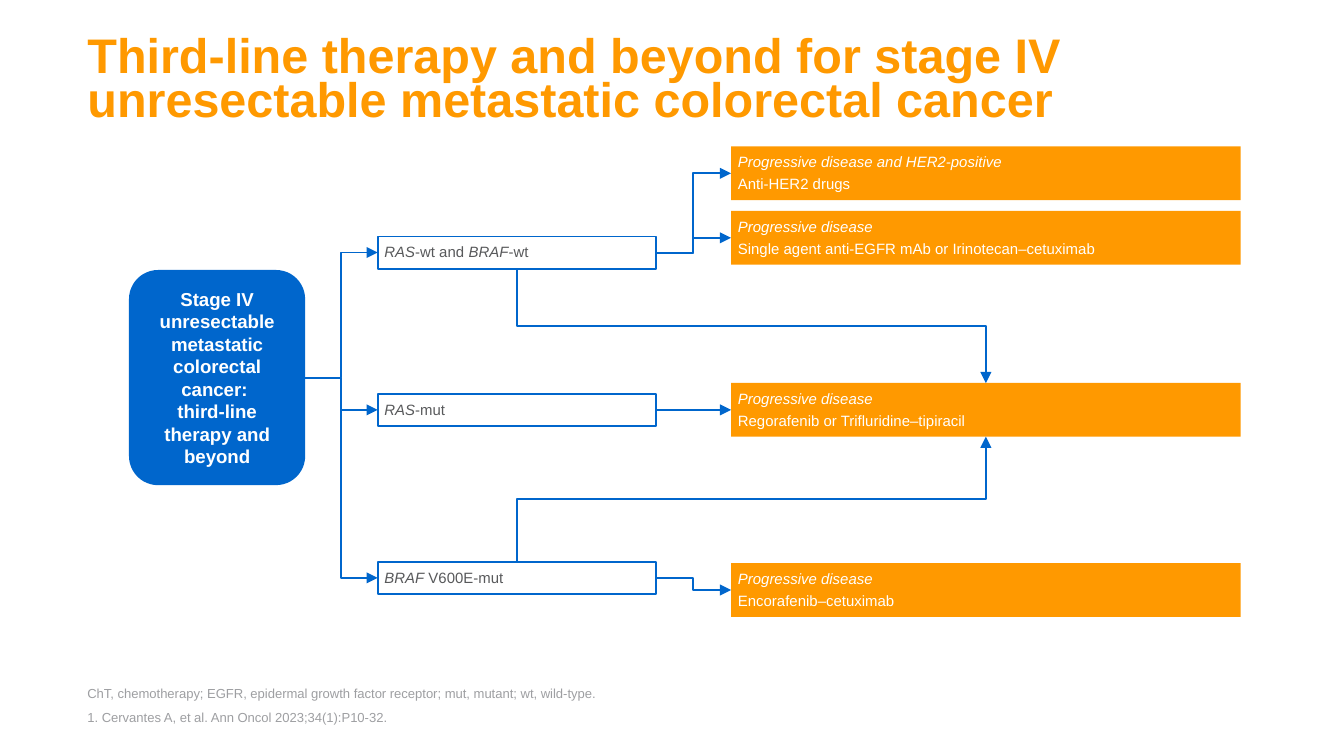
from dataclasses import dataclass

from lxml import etree
from pptx import Presentation
from pptx.dml.color import RGBColor
from pptx.enum.shapes import MSO_CONNECTOR, MSO_SHAPE
from pptx.enum.text import MSO_ANCHOR, MSO_AUTO_SIZE, PP_ALIGN
from pptx.oxml.ns import qn
from pptx.util import Inches, Pt


@dataclass(frozen=True)
class Theme:
    font: str = "Arial"
    orange: RGBColor = RGBColor(0xFF, 0x99, 0x00)
    blue: RGBColor = RGBColor(0x00, 0x66, 0xCC)
    white: RGBColor = RGBColor(0xFF, 0xFF, 0xFF)
    dark: RGBColor = RGBColor(0x58, 0x59, 0x5B)
    grey: RGBColor = RGBColor(0x9E, 0x9F, 0xA2)
    title_size: int = 26
    start_size: int = 10
    box_size: int = 8
    note_size: int = 7


theme = Theme()


def write_text(shape, paragraphs, *, size, color, bold=False, margin=0,
               align=PP_ALIGN.LEFT, anchor=MSO_ANCHOR.TOP, after=0,
               spacing=None, fit=MSO_AUTO_SIZE.NONE):
    """Fill a shape; each paragraph is a list of (text, italic) spans."""
    frame = shape.text_frame
    frame.word_wrap = True
    frame.auto_size = fit
    frame.vertical_anchor = anchor
    frame.margin_left = frame.margin_right = Inches(margin)
    frame.margin_top = frame.margin_bottom = Inches(margin)
    for index, spans in enumerate(paragraphs):
        para = frame.add_paragraph() if index else frame.paragraphs[0]
        para.alignment = align
        para.space_before, para.space_after = Pt(0), Pt(after)
        if spacing:
            para.line_spacing = spacing
        for text, italic in spans:
            if text == "\n":
                para.add_line_break()
                continue
            span = para.add_run()
            span.text = text
            span.font.name, span.font.size = theme.font, Pt(size)
            span.font.bold, span.font.italic = bold, italic
            span.font.color.rgb = color


def add_arrow(begin, end):
    """Draw an elbow arrow between two points given in slide units."""
    arrow = page.shapes.add_connector(MSO_CONNECTOR.ELBOW, *begin, *end)
    arrow.line.color.rgb = theme.blue
    arrow.line.width = Pt(1)
    properties = arrow._element.spPr
    etree.SubElement(properties.find(qn("a:ln")), qn("a:tailEnd"), type="triangle")
    etree.SubElement(properties, qn("a:effectLst"))
    return arrow


deck = Presentation()
deck.slide_width, deck.slide_height = Inches(10), Inches(10) * 9 // 16
page = deck.slides.add_slide(deck.slide_layouts[1])

# Title
title = page.shapes.title
title.left, title.top = Inches(0.65), Inches(0.3)
title.width, title.height = Inches(8.72), Inches(0.64)
write_text(title, [[("Third-line therapy and beyond for stage IV "
                     "unresectable metastatic colorectal cancer", False)]],
           size=theme.title_size, color=theme.orange, bold=True,
           anchor=MSO_ANCHOR.BOTTOM, spacing=0.75)

# Abbreviations and reference
notes = page.placeholders[1]
notes.left, notes.top = Inches(0.65), Inches(4.89)
notes.width, notes.height = Inches(8.47), Inches(0.33)
write_text(notes, [[("ChT, chemotherapy; EGFR, epidermal growth factor receptor; "
                     "mut, mutant; wt, wild-type.", False)]],
           size=theme.note_size, color=theme.grey,
           anchor=MSO_ANCHOR.BOTTOM, after=3)
note_format = notes.text_frame.paragraphs[0]._p.get_or_add_pPr()
note_format.set("marL", "0")
note_format.set("indent", "0")
etree.SubElement(note_format, qn("a:buNone"))

reference = page.shapes.add_textbox(Inches(0.65), Inches(5.28), Inches(8.72), Inches(0.4))
write_text(reference, [[("1. Cervantes A, et al. Ann Oncol 2023;34(1):P10-32.", False)]],
           size=theme.note_size, color=theme.grey)

# Starting point
start = page.shapes.add_shape(MSO_SHAPE.ROUNDED_RECTANGLE, Inches(0.97), Inches(2.02),
                              Inches(1.29), Inches(1.58))
start.adjustments[0] = 0.16
start.shadow.inherit = False
start.fill.solid()
start.fill.fore_color.rgb = theme.blue
start.line.color.rgb = theme.blue
start.line.width = Pt(1.5)
write_text(start, [[("Stage IV unresectable metastatic colorectal cancer: ", False),
                    ("\n", False), ("third-line therapy and beyond", False)]],
           size=theme.start_size, color=theme.white, bold=True, margin=0.06,
           align=PP_ALIGN.CENTER, anchor=MSO_ANCHOR.MIDDLE,
           fit=MSO_AUTO_SIZE.SHAPE_TO_FIT_TEXT)

# Mutation status boxes
statuses = {
    "wild": (1.76, [("RAS", True), ("-wt and ", False), ("BRAF", True), ("-wt", False)]),
    "ras": (2.93, [("RAS", True), ("-mut", False)]),
    "braf": (4.18, [("BRAF", True), (" V600E-mut", False)]),
}
boxes = {}
for name, (top, spans) in statuses.items():
    box = page.shapes.add_shape(MSO_SHAPE.RECTANGLE, Inches(2.81), Inches(top),
                                Inches(2.07), Inches(0.24))
    box.shadow.inherit = False
    box.fill.background()
    box.line.color.rgb = theme.blue
    box.line.width = Pt(1)
    write_text(box, [spans], size=theme.box_size, color=theme.dark, margin=0.05,
               fit=MSO_AUTO_SIZE.SHAPE_TO_FIT_TEXT)
    boxes[name] = box

# Treatment boxes
treatments = {
    "her2": (1.09, "Progressive disease and HER2-positive", "Anti-HER2 drugs"),
    "egfr": (1.57, "Progressive disease",
             "Single agent anti-EGFR mAb or Irinotecan–cetuximab"),
    "late": (2.85, "Progressive disease", "Regorafenib or Trifluridine–tipiracil"),
    "encorafenib": (4.19, "Progressive disease", "Encorafenib–cetuximab"),
}
for name, (top, condition, drugs) in treatments.items():
    box = page.shapes.add_shape(MSO_SHAPE.RECTANGLE, Inches(5.44), Inches(top),
                                Inches(3.79), Inches(0.4))
    box.shadow.inherit = False
    box.fill.solid()
    box.fill.fore_color.rgb = theme.orange
    box.line.fill.background()
    write_text(box, [[(condition, True)], [(drugs, False)]], size=theme.box_size,
               color=theme.white, margin=0.05, after=2,
               fit=MSO_AUTO_SIZE.SHAPE_TO_FIT_TEXT)
    boxes[name] = box

# Arrows from right side to left side
links = [(start, boxes[name]) for name in statuses]
links += [(boxes[source], boxes[target]) for source, target in (
    ("wild", "her2"), ("wild", "egfr"), ("ras", "late"), ("braf", "encorafenib"))]
for source, target in links:
    arrow = add_arrow((source.left + source.width, source.top + source.height // 2),
                      (target.left, target.top + target.height // 2))
    arrow.begin_connect(source, 3)
    arrow.end_connect(target, 1)

# Arrows that leave vertically: a sideways elbow turned by a quarter
late = boxes["late"]
for source, direction in ((boxes["wild"], 1), (boxes["braf"], -1)):
    if direction == 1:
        begin_y, end_y = source.top + source.height, late.top
    else:
        begin_y, end_y = source.top, late.top + late.height
    begin_x = source.left + source.width // 2
    end_x = late.left + late.width // 2
    center_x, center_y = (begin_x + end_x) // 2, (begin_y + end_y) // 2
    half_drop = abs(end_y - begin_y) // 2
    half_run = direction * (end_x - begin_x) // 2
    arrow = add_arrow((center_x + half_drop, center_y - half_run),
                      (center_x - half_drop, center_y + half_run))
    arrow.rotation = 270 if direction == 1 else 90

deck.save("out.pptx")
